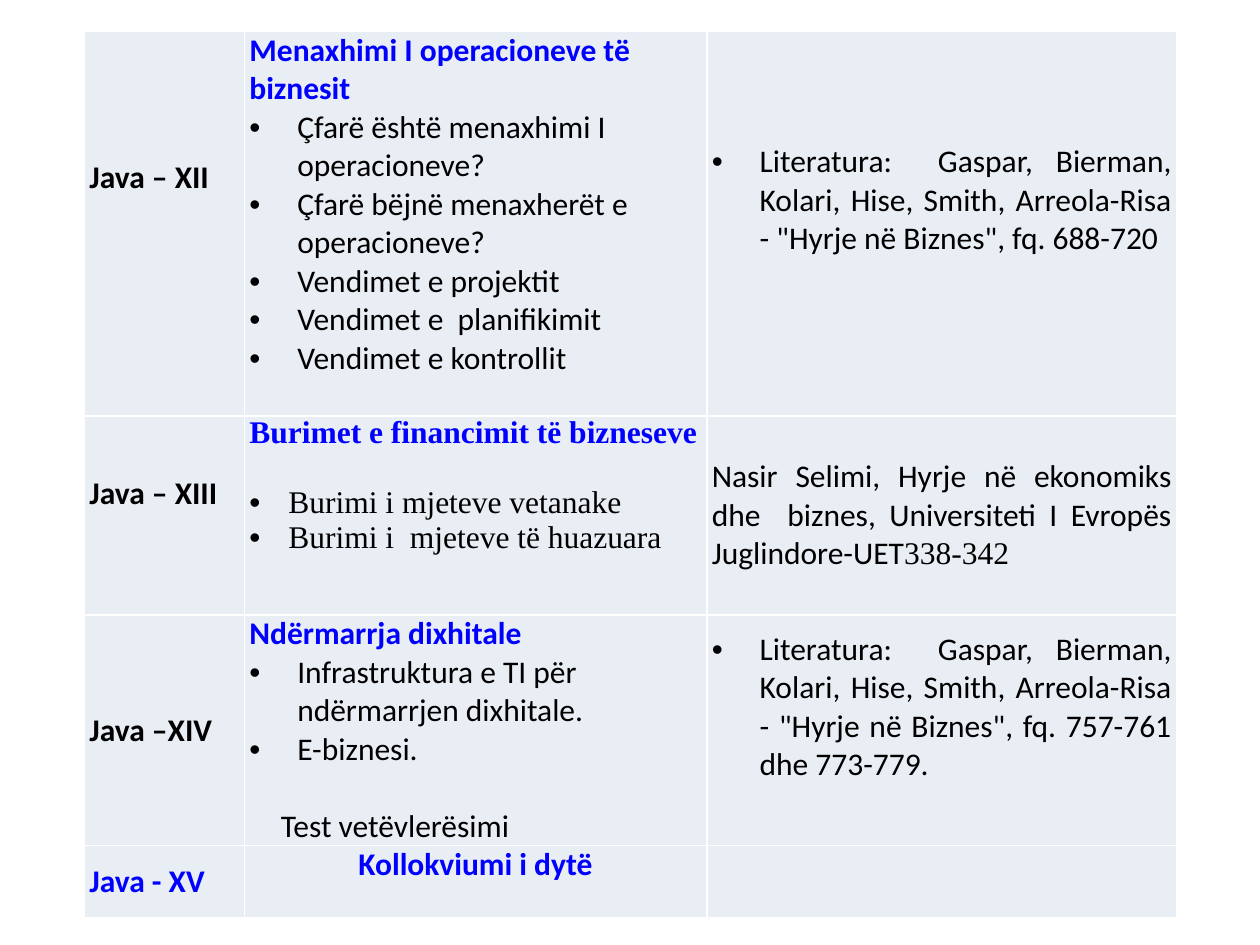
"""Build a course-plan slide: weeks, topics and literature in one table."""
from dataclasses import dataclass

from lxml import etree
from pptx import Presentation
from pptx.dml.color import RGBColor
from pptx.enum.text import MSO_ANCHOR, PP_ALIGN
from pptx.oxml.ns import qn
from pptx.util import Inches, Pt

LEFT, CENTER, JUSTIFY = PP_ALIGN.LEFT, PP_ALIGN.CENTER, PP_ALIGN.JUSTIFY
TOP, MIDDLE = MSO_ANCHOR.TOP, MSO_ANCHOR.MIDDLE


@dataclass(frozen=True)
class Theme:
    """Colours, fonts, sizes and spacing of the slide."""
    text: str = "000000"
    accent: str = "0000FF"
    cell: str = "E9EDF4"
    border: str = "FFFFFF"
    sans: str = "Calibri"
    serif: str = "Times New Roman"
    size: float = 18
    border_width: float = 1
    spacing: float = 4.8


THEME = Theme()
LABEL_SPACING = {"space_before": Pt(THEME.spacing), "space_after": Pt(THEME.spacing)}


@dataclass
class Line:
    """One paragraph of a cell; runs are (text, font name) pairs."""
    runs: list
    color: str = THEME.text
    bold: bool = False
    indent: float = 0
    bullet: bool = False
    layout: dict = None


@dataclass
class Entry:
    """The lines of one cell with its anchor and bottom margin."""
    lines: list
    anchor: int = TOP
    bottom: float = 0


def heading(text, font=THEME.sans, align=LEFT):
    """Return a bold accent line."""
    return Line([(text, font)], THEME.accent, True, layout={"alignment": align})


def bullet(text, font=THEME.sans, indent=0.38, align=LEFT, gap=0):
    """Return a bulleted line with a hanging indent and a gap above in points."""
    layout = {"alignment": align, "space_before": Pt(gap)}
    return Line([(text, font)], indent=indent, bullet=True, layout=layout)


def week(text, color=THEME.text, bottom=0):
    """Return the entry that names a week."""
    layout = {"alignment": JUSTIFY, **LABEL_SPACING}
    return Entry([Line([(text, THEME.sans)], color, True, layout=layout)], MIDDLE, bottom)


def literature(pages):
    """Return the entry that cites the main textbook."""
    source = "Literatura:  Gaspar, Bierman, Kolari, Hise, Smith, Arreola-Risa - \"Hyrje në Biznes\", fq. "
    return Entry([bullet(source + pages, align=JUSTIFY)], MIDDLE, 0.37)


def course_plan():
    """Return (height, entries) for each row of the plan."""
    operations = ["Çfarë është menaxhimi I operacioneve?", "Çfarë bëjnë menaxherët e operacioneve?",
                  "Vendimet e projektit", "Vendimet e  planifikimit", "Vendimet e kontrollit"]
    finance_source = Line(
        [("Nasir Selimi, Hyrje në ekonomiks dhe  biznes, Universiteti I Evropës Juglindore-UET",
          THEME.sans), ("338-342", THEME.serif)],
        layout={"alignment": JUSTIFY, **LABEL_SPACING})
    self_test = Line([("Test vetëvlerësimi", THEME.sans)], indent=0.25,
                     layout={"alignment": LEFT, "space_before": Pt(22)})
    return [
        (3.05, [week("Java – XII", bottom=0.73),
                Entry([heading("Menaxhimi I operacioneve të biznesit"), *map(bullet, operations)]),
                literature("688-720")]),
        (1.58, [week("Java – XIII", bottom=0.34),
                Entry([heading("Burimet e financimit të bizneseve", THEME.serif),
                       bullet("Burimi i mjeteve vetanake", THEME.serif, 0.31, gap=19.8),
                       bullet("Burimi i  mjeteve të huazuara", THEME.serif, 0.31)]),
                Entry([finance_source], MIDDLE)]),
        (1.83, [week("Java –XIV"),
                Entry([heading("Ndërmarrja dixhitale"),
                       bullet("Infrastruktura e TI për ndërmarrjen dixhitale."),
                       bullet("E-biznesi."), self_test]),
                literature("757-761 dhe 773-779.")]),
        (0.57, [week("Java - XV", THEME.accent),
                Entry([heading("Kollokviumi i dytë", align=CENTER)]),
                Entry([])]),
    ]


def apply(target, values):
    """Set each named attribute of the target."""
    for name, value in values.items():
        setattr(target, name, value)


def write_line(paragraph, line):
    """Fill a paragraph with the runs and layout of a line."""
    apply(paragraph, line.layout)
    properties = paragraph._p.get_or_add_pPr()
    if line.indent:
        properties.set("marL", str(Inches(line.indent)))
        properties.set("indent", str(Inches(-line.indent if line.bullet else 0)))
    if line.bullet:
        etree.SubElement(properties, qn("a:buFont")).set("typeface", "Arial")
        etree.SubElement(properties, qn("a:buChar")).set("char", "•")
    for text, font in line.runs:
        run = paragraph.add_run()
        run.text = text
        apply(run.font, {"name": font, "size": Pt(THEME.size), "bold": line.bold})
        run.font.color.rgb = RGBColor.from_string(line.color)


def style_cell(cell, entry):
    """Give a cell its margins, borders and fill."""
    apply(cell, {"margin_left": Inches(0.04), "margin_right": Inches(0.04), "margin_top": 0,
                 "margin_bottom": Inches(entry.bottom), "vertical_anchor": entry.anchor})
    properties = cell._tc.get_or_add_tcPr()
    for side in ("lnL", "lnR", "lnT", "lnB"):
        border = etree.SubElement(properties, qn(f"a:{side}"), w=str(Pt(THEME.border_width)))
        paint = etree.SubElement(border, qn("a:solidFill"))
        etree.SubElement(paint, qn("a:srgbClr"), val=THEME.border)
    cell.fill.solid()
    cell.fill.fore_color.rgb = RGBColor.from_string(THEME.cell)


def fill_cell(cell, entry):
    """Style a cell and write its lines."""
    style_cell(cell, entry)
    frame = cell.text_frame
    for index, line in enumerate(entry.lines):
        write_line(frame.add_paragraph() if index else frame.paragraphs[0], line)


def add_plan_table(slide, plan, widths):
    """Add the plan as a table with the given column widths."""
    total_height = sum(height for height, _ in plan)
    table = slide.shapes.add_table(len(plan), len(widths), Inches(0.67), Inches(0.25),
                                   Inches(sum(widths)), Inches(total_height)).table
    apply(table, {"first_row": False, "horz_banding": False})
    for column, width in zip(table.columns, widths):
        column.width = Inches(width)
    for row, (height, entries) in zip(table.rows, plan):
        row.height = Inches(height)
        for cell, entry in zip(row.cells, entries):
            fill_cell(cell, entry)


def main():
    """Build and save the slide."""
    presentation = Presentation()
    apply(presentation, {"slide_width": Inches(10), "slide_height": Inches(7.5)})
    slide = presentation.slides.add_slide(presentation.slide_layouts[6])
    add_plan_table(slide, course_plan(), [1.27, 3.67, 3.73])
    presentation.save("out.pptx")


if __name__ == "__main__":
    main()
